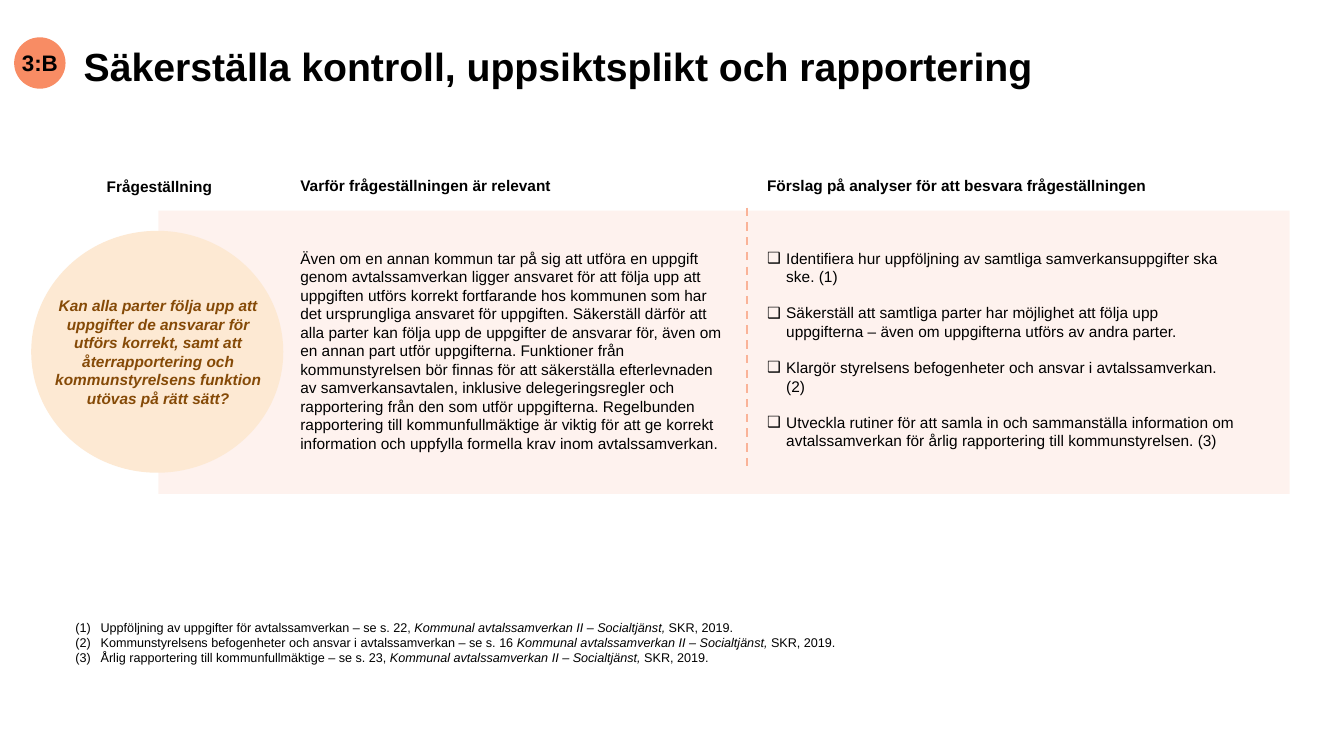
from dataclasses import dataclass

from lxml import etree
from pptx import Presentation
from pptx.dml.color import RGBColor
from pptx.enum.dml import MSO_LINE
from pptx.enum.shapes import MSO_CONNECTOR, MSO_SHAPE
from pptx.enum.text import MSO_ANCHOR, MSO_AUTO_SIZE, PP_ALIGN
from pptx.oxml.ns import qn
from pptx.util import Inches, Pt

RECTANGLE, OVAL = MSO_SHAPE.RECTANGLE, MSO_SHAPE.OVAL
STRAIGHT, DASH = MSO_CONNECTOR.STRAIGHT, MSO_LINE.DASH
LEFT, CENTER = PP_ALIGN.LEFT, PP_ALIGN.CENTER
TOP, MIDDLE = MSO_ANCHOR.TOP, MSO_ANCHOR.MIDDLE
NO_AUTOFIT = MSO_AUTO_SIZE.NONE


@dataclass(frozen=True)
class Theme:
    font: str = "Arial"
    ink: str = "000000"
    panel: str = "FDD9CB"
    panel_opacity: int = 32
    divider: str = "FAB398"
    badge: str = "F88C64"
    circle: str = "FDE9D3"
    question: str = "854A07"
    title_size: float = 28
    badge_size: float = 16
    body_size: float = 11
    note_size: float = 9
    item_gap: float = 12.65


THEME = Theme()

TITLE = "Säkerställa kontroll, uppsiktsplikt och rapportering"
QUESTION = (
    "Kan alla parter följa upp att uppgifter de ansvarar för utförs korrekt, samt att "
    "återrapportering och kommunstyrelsens funktion utövas på rätt sätt?"
)
RELEVANCE = (
    "Även om en annan kommun tar på sig att utföra en uppgift genom avtalssamverkan ligger "
    "ansvaret för att följa upp att uppgiften utförs korrekt fortfarande hos kommunen som har "
    "det ursprungliga ansvaret för uppgiften. Säkerställ därför att alla parter kan följa upp "
    "de uppgifter de ansvarar för, även om en annan part utför uppgifterna. Funktioner från "
    "kommunstyrelsen bör finnas för att säkerställa efterlevnaden av samverkansavtalen, "
    "inklusive delegeringsregler och rapportering från den som utför uppgifterna. Regelbunden "
    "rapportering till kommunfullmäktige är viktig för att ge korrekt information och uppfylla "
    "formella krav inom avtalssamverkan."
)
ANALYSES = [
    "Identifiera hur uppföljning av samtliga samverkansuppgifter ska ske. (1)",
    "Säkerställ att samtliga parter har möjlighet att följa upp uppgifterna – även om "
    "uppgifterna utförs av andra parter.",
    "Klargör styrelsens befogenheter och ansvar i avtalssamverkan. (2)",
    "Utveckla rutiner för att samla in och sammanställa information om avtalssamverkan för "
    "årlig rapportering till kommunstyrelsen. (3)",
]
REFERENCES = [
    "Uppföljning av uppgifter för avtalssamverkan – se s. 22, ",
    "Kommunstyrelsens befogenheter och ansvar i avtalssamverkan – se s. 16 ",
    "Årlig rapportering till kommunfullmäktige – se s. 23, ",
]
PUBLICATION = "Kommunal avtalssamverkan II – Socialtjänst, "
PUBLISHER = "SKR, 2019."


def style(paragraph, size, color=THEME.ink, bold=False, italic=None, align=LEFT):
    paragraph.alignment = align
    font = paragraph.font
    font.name, font.size = THEME.font, Pt(size)
    font.bold, font.italic = bold, italic
    font.color.rgb = RGBColor.from_string(color)


def add_list_mark(paragraph, indent, tag, **attributes):
    """Give the paragraph a hanging indent and a bullet or number."""
    properties = paragraph._p.get_or_add_pPr()
    properties.set("marL", str(Inches(indent)))
    properties.set("indent", str(-Inches(indent)))
    etree.SubElement(properties, qn("a:buFont")).set("typeface", THEME.font)
    etree.SubElement(properties, qn(tag), attributes)


def add_text_frame(slide, left, top, width, height):
    box = slide.shapes.add_textbox(Inches(left), Inches(top), Inches(width), Inches(height))
    box.text_frame.word_wrap = True
    return box.text_frame


def add_text(slide, box, text, **look):
    paragraph = add_text_frame(slide, *box).paragraphs[0]
    paragraph.text = text
    style(paragraph, THEME.body_size, **look)


def add_filled_shape(slide, preset, box, color):
    shape = slide.shapes.add_shape(preset, *map(Inches, box))
    shape.shadow.inherit = False
    shape.fill.solid()
    shape.fill.fore_color.rgb = RGBColor.from_string(color)
    shape.line.fill.background()
    return shape


def add_header(slide, left, top):
    title = slide.shapes.title
    title.left, title.top = Inches(left + 0.59), Inches(top + 0.03)
    title.width, title.height = Inches(12.8), Inches(0.76)
    frame = title.text_frame
    frame.auto_size, frame.vertical_anchor = NO_AUTOFIT, TOP
    heading = frame.paragraphs[0]
    heading.text = TITLE
    heading.line_spacing = 0.95
    style(heading, THEME.title_size, bold=True)

    badge = add_filled_shape(slide, OVAL, (left, top, 0.51, 0.51), THEME.badge).text_frame
    badge.margin_left = badge.margin_right = badge.margin_top = badge.margin_bottom = 0
    badge.vertical_anchor, badge.word_wrap = MIDDLE, False
    number = badge.paragraphs[0]
    number.text = "3:B"
    style(number, THEME.badge_size, bold=True, align=CENTER)


def add_panel(slide, left, top, width, height):
    """Draw the tinted panel and the dashed line between its two columns."""
    panel = add_filled_shape(slide, RECTANGLE, (left, top, width, height), THEME.panel)
    color = panel.fill._xPr.find(qn("a:solidFill"))[0]
    etree.SubElement(color, qn("a:alpha")).set("val", str(THEME.panel_opacity * 1000))

    x = Inches(left + 5.84)
    divider = slide.shapes.add_connector(
        STRAIGHT, x, Inches(top - 0.03), x, Inches(top + 2.53))
    divider.line.color.rgb = RGBColor.from_string(THEME.divider)
    divider.line.width, divider.line.dash_style = Pt(1.5), DASH
    etree.SubElement(divider._element.spPr, qn("a:effectLst"))


def add_question(slide, left, top, width, height):
    add_text(slide, (left + 0.65, top - 0.58, 1.57, 0.29), "Frågeställning", bold=True)
    add_filled_shape(slide, OVAL, (left, top, width, height), THEME.circle)
    add_text(slide, (left + 0.06, top + 0.6, width - 0.1, 1.21), QUESTION,
             color=THEME.question, bold=True, italic=True, align=CENTER)


def add_column_heading(slide, left, top, width, heading):
    add_text(slide, (left, top, width, 0.29), heading, bold=True)


def add_relevance(slide, left, top, width, height):
    add_column_heading(slide, left, top, width, "Varför frågeställningen är relevant")
    add_text(slide, (left, top + 0.72, width, height - 0.72), RELEVANCE)


def add_analyses(slide, left, top, width, height):
    add_column_heading(slide, left, top, width,
                       "Förslag på analyser för att besvara frågeställningen")
    frame = add_text_frame(slide, left, top + 0.72, width, height - 0.72)
    for index, analysis in enumerate(ANALYSES):
        item = frame.add_paragraph() if index else frame.paragraphs[0]
        item.text = analysis
        add_list_mark(item, 0.19, "a:buChar", char="❑")
        if index:
            item.space_before = Pt(THEME.item_gap)
        style(item, THEME.body_size)


def add_references(slide, left, top, width, height):
    frame = add_text_frame(slide, left, top, width, height)
    for index, reference in enumerate(REFERENCES):
        note = frame.add_paragraph() if index else frame.paragraphs[0]
        for text in (reference, PUBLICATION, PUBLISHER):
            run = note.add_run()
            run.text = text
            if text == PUBLICATION:
                run.font.italic = True
        add_list_mark(note, 0.25, "a:buAutoNum", type="arabicParenBoth")
        style(note, THEME.note_size)


def main():
    deck = Presentation()
    deck.slide_width, deck.slide_height = Inches(13.33), Inches(7.5)
    slide = deck.slides.add_slide(deck.slide_layouts.get_by_name("Title Only"))
    add_header(slide, 0.14, 0.37)
    add_panel(slide, 1.57, 2.09, 11.22, 2.81)
    add_question(slide, 0.31, 2.29, 2.5, 2.4)
    add_relevance(slide, 2.88, 1.7, 4.41, 2.86)
    add_analyses(slide, 7.51, 1.7, 4.87, 2.86)
    add_references(slide, 0.65, 6.1, 9.2, 0.56)
    deck.save("out.pptx")


if __name__ == "__main__":
    main()
